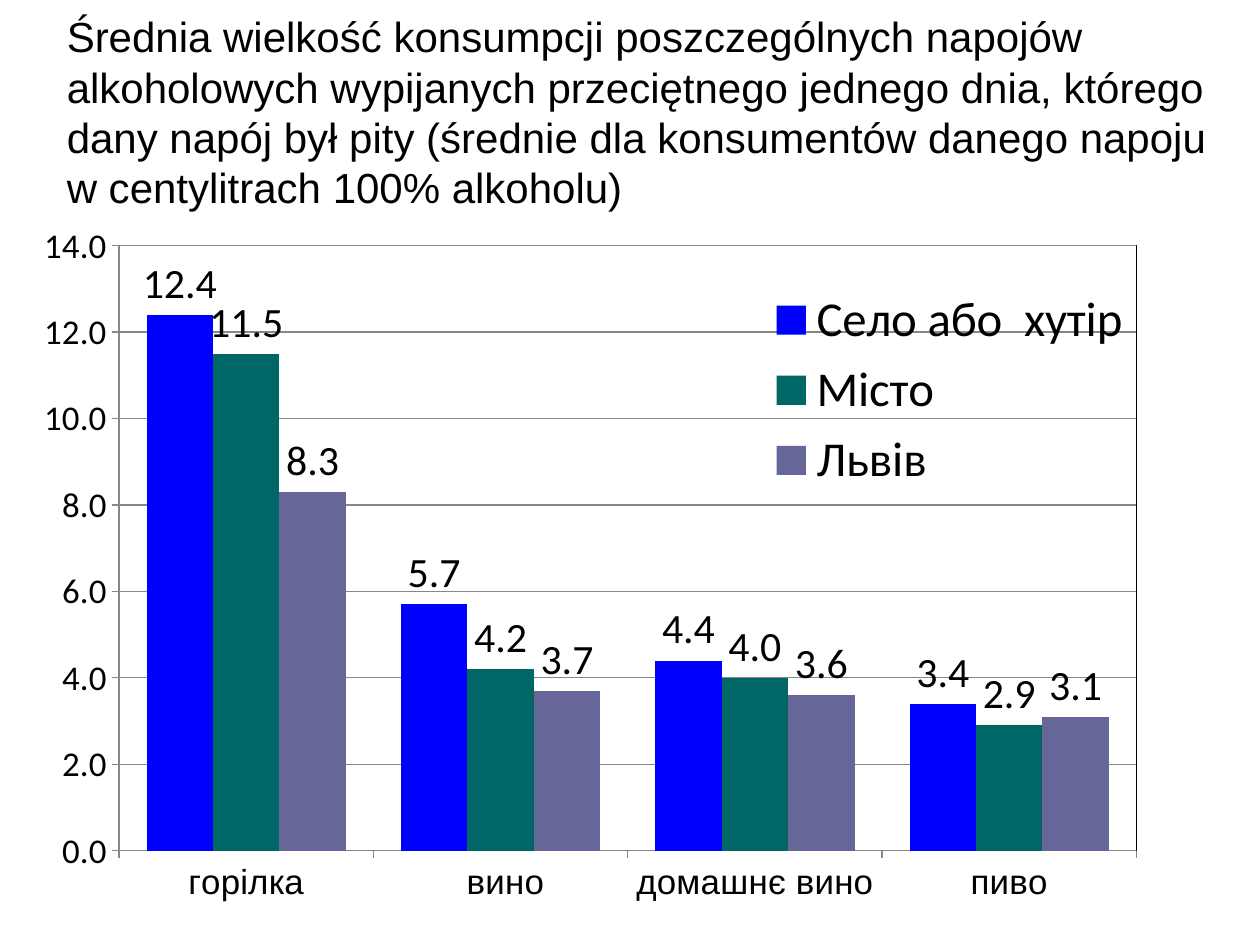
from lxml import etree
from pptx import Presentation
from pptx.chart.data import CategoryChartData
from pptx.dml.color import RGBColor
from pptx.enum.chart import XL_CHART_TYPE as ChartType
from pptx.enum.chart import XL_LABEL_POSITION as LabelPos
from pptx.enum.chart import XL_LEGEND_POSITION as LegendPos
from pptx.enum.chart import XL_TICK_MARK as Tick
from pptx.enum.text import MSO_ANCHOR as Anchor
from pptx.enum.text import PP_ALIGN as Align
from pptx.oxml import parse_xml
from pptx.oxml.ns import nsdecls, qn
from pptx.util import Inches, Pt

TITLE = (
    "Średnia wielkość konsumpcji poszczególnych napojów alkoholowych "
    "wypijanych przeciętnego jednego dnia, którego dany napój był pity "
    "(średnie dla konsumentów danego napoju w centylitrach 100% alkoholu)"
)
DRINKS = ["горілка", " вино", "домашнє вино", "пиво"]
PLACES = [
    ("Село або  хутір", (12.4, 5.7, 4.4, 3.4), "0000FF"),
    ("Місто", (11.5, 4.2, 4.0, 2.9), "006666"),
    ("Львів", (8.3, 3.7, 3.6, 3.1), "666699"),
]
BLACK, GREY = "000000", "878787"


def rgb(value):
    return RGBColor.from_string(value)


def set_attrs(obj, **values):
    for name, value in values.items():
        setattr(obj, name, value)


def set_font(font, size, name="Calibri"):
    set_attrs(font, size=Pt(size), name=name, bold=False)
    font.color.rgb = rgb(BLACK)


def set_line(line, color):
    line.color.rgb = rgb(color)
    line.width = Pt(0.75)


def set_layout(parent, after, box, inner=False):
    for old in parent.findall(qn("c:layout")):
        parent.remove(old)
    layout = etree.Element(qn("c:layout"))
    manual = etree.SubElement(layout, qn("c:manualLayout"))
    parts = [("layoutTarget", "inner")] if inner else []
    parts += [("xMode", "edge"), ("yMode", "edge"), *zip("xywh", box)]
    for tag, value in parts:
        etree.SubElement(manual, qn(f"c:{tag}")).set("val", str(value))
    if after is None:
        parent.insert(0, layout)
    else:
        after.addnext(layout)


def add_title(slide, box):
    sp = slide.shapes.title
    set_attrs(sp, **dict(zip(("left", "top", "width", "height"), box)))
    tf = sp.text_frame
    set_attrs(tf, word_wrap=True, vertical_anchor=Anchor.MIDDLE)
    p = tf.paragraphs[0]
    p.alignment = Align.LEFT
    r = p.add_run()
    r.text = TITLE
    set_font(r.font, 24, "Arial")


def format_axes(chart):
    cat, val = chart.category_axis, chart.value_axis
    for axis, font in ((cat, "Arial"), (val, "Calibri")):
        set_attrs(axis, major_tick_mark=Tick.OUTSIDE, minor_tick_mark=Tick.NONE)
        set_font(axis.tick_labels.font, 20, font)
        set_line(axis.format.line, GREY)
    set_attrs(val, minimum_scale=0, maximum_scale=14, major_unit=2,
              has_major_gridlines=True)
    set_line(val.major_gridlines.format.line, GREY)
    set_attrs(val.tick_labels, number_format="0.0",
              number_format_is_linked=False)


def format_series(plot):
    set_attrs(plot, gap_width=83, overlap=0, vary_by_categories=False)
    for series, (_, _, color) in zip(plot.series, PLACES):
        series.format.fill.solid()
        series.format.fill.fore_color.rgb = rgb(color)
        labels = series.data_labels
        set_attrs(labels, show_value=True, position=LabelPos.OUTSIDE_END,
                  number_format="0.0", number_format_is_linked=False)
        set_font(labels.font, 24)


def format_legend(chart):
    chart.has_legend = True
    legend = chart.legend
    set_attrs(legend, position=LegendPos.TOP, include_in_layout=True)
    set_font(legend.font, 28)
    xml = chart._chartSpace.find(".//" + qn("c:legend"))
    set_layout(xml, xml.find(qn("c:legendPos")), (0.62, 0.08, 0.3, 0.33))


def add_chart(slide, box):
    data = CategoryChartData(number_format="0.0")
    data.categories = DRINKS
    for name, values, _ in PLACES:
        data.add_series(name, values)
    chart = slide.shapes.add_chart(
        ChartType.COLUMN_CLUSTERED, *box, data).chart
    chart.has_title = False
    set_font(chart.font, 18)
    format_axes(chart)
    format_series(chart.plots[0])
    format_legend(chart)
    area = chart._chartSpace.find(".//" + qn("c:plotArea"))
    set_layout(area, None, (0.06, 0.03, 0.87, 0.9), inner=True)
    area.append(parse_xml(
        f'<c:spPr {nsdecls("c", "a")}><a:noFill/><a:ln w="9525"><a:solidFill>'
        f'<a:srgbClr val="{BLACK}"/></a:solidFill></a:ln></c:spPr>'))


def main():
    prs = Presentation()
    set_attrs(prs, slide_width=Inches(10), slide_height=Inches(7.5))
    slide = prs.slides.add_slide(prs.slide_layouts[5])
    add_title(slide, [Inches(n) for n in (0.43, 0.06, 9.57, 1.65)])
    add_chart(slide, [Inches(n) for n in (0.35, 1.78, 9.32, 5.38)])
    prs.save("out.pptx")


if __name__ == "__main__":
    main()
